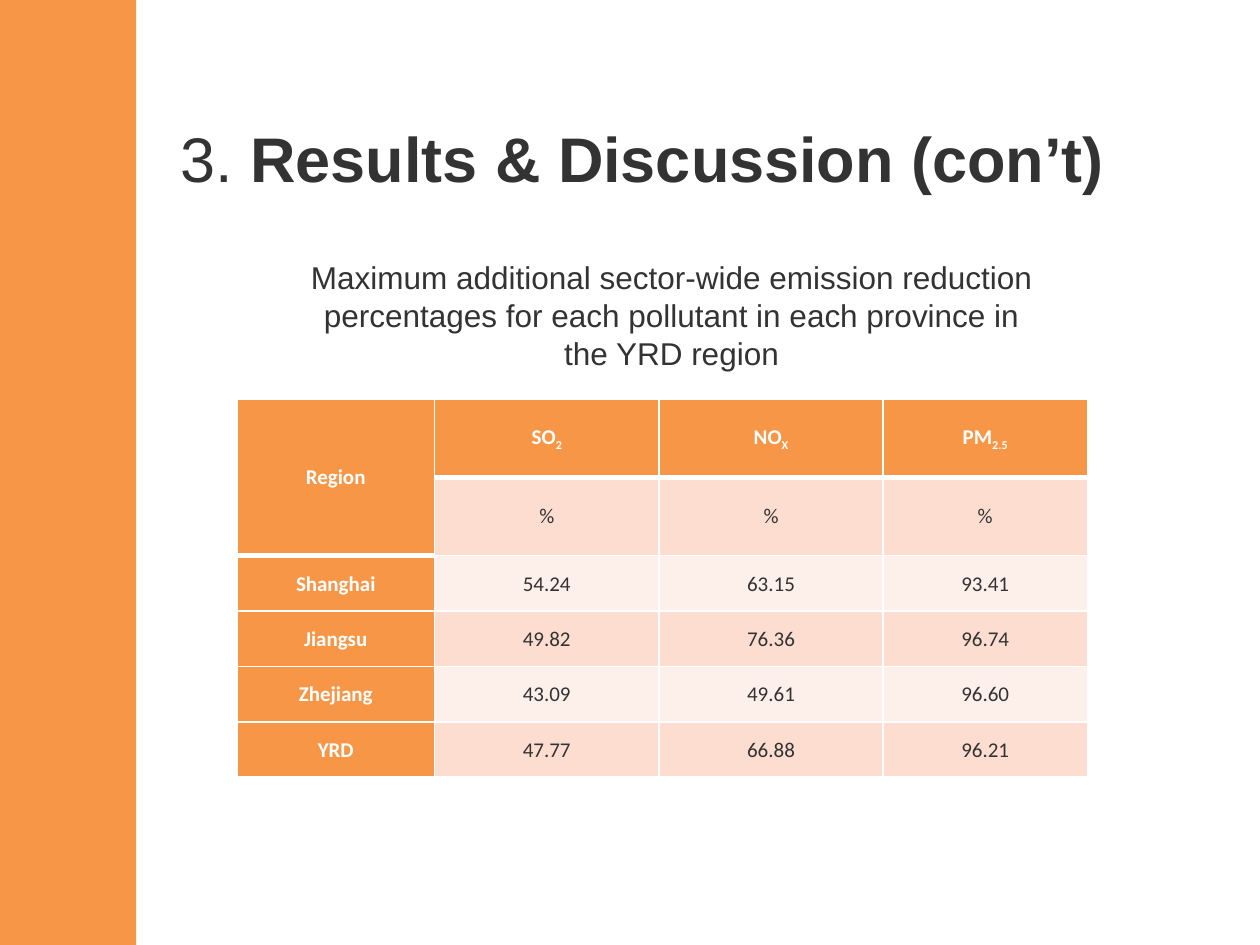
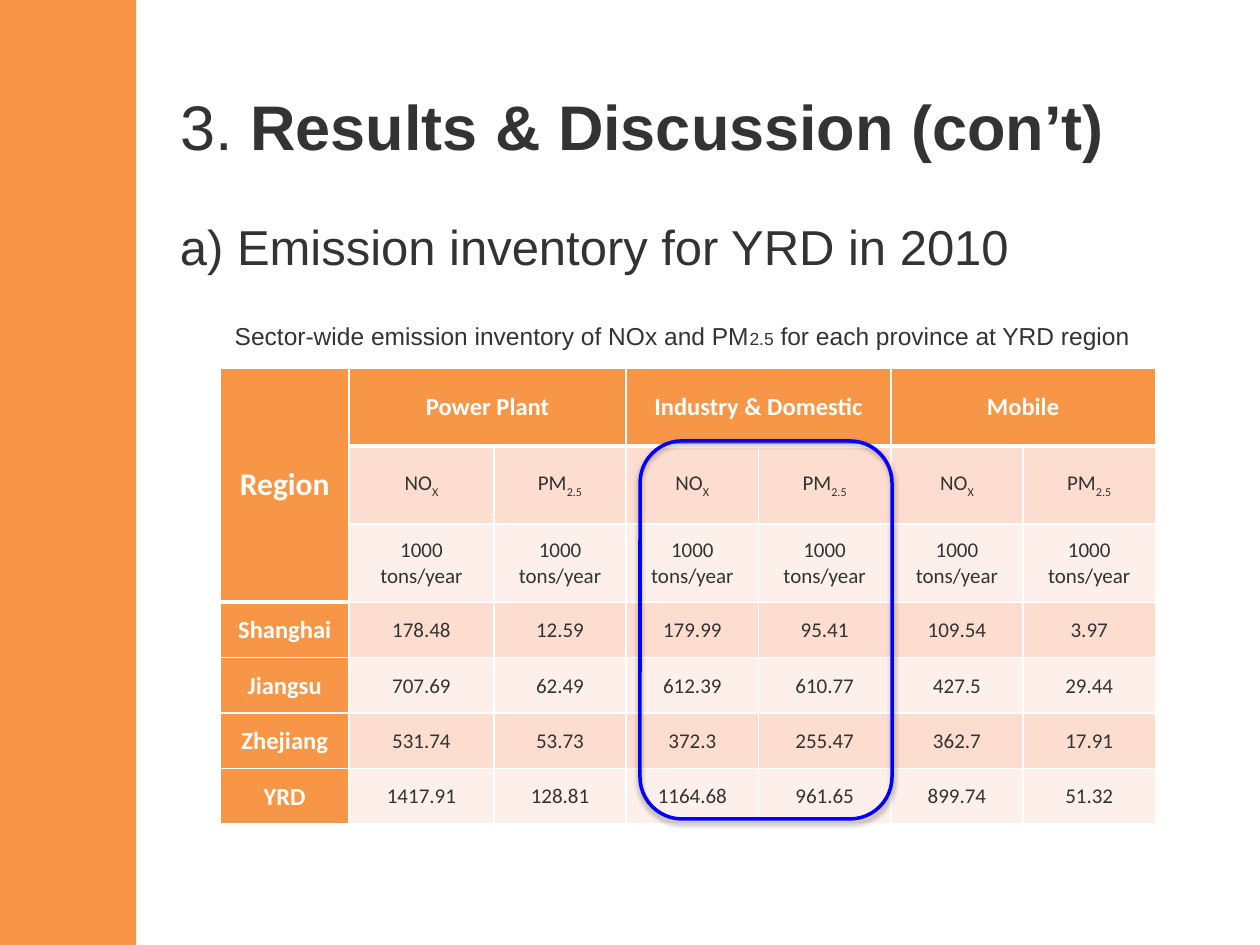
"""Build two results slides on emissions in the YRD region."""
from lxml.etree import SubElement
from pptx import Presentation
from pptx.dml.color import RGBColor
from pptx.enum.shapes import MSO_SHAPE
from pptx.enum.text import MSO_ANCHOR, MSO_AUTO_SIZE, PP_ALIGN
from pptx.oxml.ns import qn
from pptx.util import Inches, Pt

COLORS = {
    "orange": "F79646",
    "text": "333333",
    "white": "FFFFFF",
    "dark_row": "FCDDCF",
    "light_row": "FDEFE9",
    "mark": "0000FF",
    "shadow": "000000",
}
HEAD_HEIGHT, DATA_HEIGHT = 0.62, 0.44
THIN, THICK = 1, 3


def color(name):
    return RGBColor.from_string(COLORS[name])


def box(left, top, width, height):
    return [Inches(v) for v in (left, top, width, height)]


def set_font(font, size, name="Arial", shade="text", bold=None):
    font.name, font.size, font.bold = name, Pt(size), bold
    font.color.rgb = color(shade)


def add_band(slide, layout):
    """Draw the side band and hand it to the layout that the slides share."""
    sp = slide.shapes.add_shape(MSO_SHAPE.RECTANGLE, *box(0, 0, 1.08, 7.5))
    sp.shadow.inherit = False
    sp.fill.solid()
    sp.fill.fore_color.rgb = color("orange")
    sp.line.fill.background()
    layout.shapes._spTree.insert(2, sp._element)


def add_title(slide, top):
    sp = slide.shapes.title
    sp.left, sp.top, sp.width, sp.height = box(1.33, top, 8, 0.83)
    tf = sp.text_frame
    tf.auto_size = MSO_AUTO_SIZE.NONE
    tf.vertical_anchor = MSO_ANCHOR.MIDDLE
    p = tf.paragraphs[0]
    p.alignment = PP_ALIGN.LEFT
    pPr = p._p.get_or_add_pPr()
    pPr.set("marL", str(Inches(0.5)))
    pPr.set("indent", str(-Inches(0.5)))
    set_font(p.font, 36)
    p.add_run().text = "3. "
    r = p.add_run()
    r.text = "Results & Discussion (con’t)"
    r.font.bold = True


def add_text(slide, bounds, runs, align=PP_ALIGN.CENTER):
    """Add a one-paragraph text box from (text, size) runs."""
    tf = slide.shapes.add_textbox(*box(*bounds)).text_frame
    tf.word_wrap = True
    p = tf.paragraphs[0]
    p.alignment = align
    set_font(p.font, runs[0][1])
    for text, size in runs:
        r = p.add_run()
        r.text = text
        r.font.size = Pt(size)


def set_borders(cell, top, bottom):
    tcPr = cell._tc.get_or_add_tcPr()
    for side, weight in (("L", THIN), ("R", THIN), ("T", top), ("B", bottom)):
        ln = SubElement(tcPr, qn(f"a:ln{side}"), w=str(Pt(weight)))
        fill = SubElement(ln, qn("a:solidFill"))
        SubElement(fill, qn("a:srgbClr"), val=COLORS["white"])


def write_cell(cell, text, size, bold):
    """Write centred cell text; what follows an underscore is a subscript."""
    cell.vertical_anchor = MSO_ANCHOR.MIDDLE
    p = cell.text_frame.paragraphs[0]
    p.alignment = PP_ALIGN.CENTER
    set_font(p.font, size, "Calibri", "white" if bold else "text", bold)
    base, _, sub = text.partition("_")
    p.add_run().text = base
    if sub:
        r = p.add_run()
        r.text = sub
        r._r.get_or_add_rPr().set("baseline", "-25000")


def add_data_table(slide, left, top, widths, heads, data, group=1,
                   head_size=12, corner_size=12):
    """Add a region table whose top cells each cover `group` columns."""
    grid = heads + data
    heights = [HEAD_HEIGHT] * len(heads) + [DATA_HEIGHT] * len(data)
    bounds = box(left, top, sum(widths), sum(heights))
    table = slide.shapes.add_table(len(grid), len(widths), *bounds).table
    for column, width in zip(table.columns, widths):
        column.width = Inches(width)
    for row, height in zip(table.rows, heights):
        row.height = Inches(height)
    table.cell(0, 0).merge(table.cell(len(heads) - 1, 0))
    if group > 1:
        for c in range(1, len(widths), group):
            table.cell(0, c).merge(table.cell(0, c + group - 1))
    for r, row in enumerate(grid):
        for c, text in enumerate(row):
            cell = table.cell(r, c)
            label = r == 0 or c == 0
            head_end = len(heads) if c == 0 else 1
            last = r + (cell.span_height if cell.is_merge_origin else 1)
            set_borders(cell, THICK if r == head_end else THIN,
                        THICK if last == head_end else THIN)
            cell.fill.solid()
            stripe = "dark_row" if r % 2 else "light_row"
            cell.fill.fore_color.rgb = color("orange" if label else stripe)
            if r >= len(heads):
                cell.margin_left = cell.margin_right = Inches(0.01)
                cell.margin_top, cell.margin_bottom = Inches(0.01), 0
            if not cell.is_spanned:
                size = corner_size if r == c == 0 else head_size if label else 12
                write_cell(cell, text, size, label)


def add_highlight(slide, bounds):
    """Outline part of a table with a softly shadowed rounded frame."""
    sp = slide.shapes.add_shape(MSO_SHAPE.ROUNDED_RECTANGLE, *box(*bounds))
    sp.fill.background()
    sp.line.color.rgb = color("mark")
    sp.line.width = Pt(2)
    sp.shadow.inherit = False
    effects = sp._element.spPr.find(qn("a:effectLst"))
    shadow = SubElement(effects, qn("a:outerShdw"), blurRad=str(Pt(3.1)),
                        dist=str(Pt(1.8)), dir="5400000", rotWithShape="0")
    clr = SubElement(shadow, qn("a:srgbClr"), val=COLORS["shadow"])
    SubElement(clr, qn("a:alpha"), val="35000")


def build_reduction_slide(slide):
    add_title(slide, 0.83)
    add_data_table(
        slide, 1.88, 3.17, [1.57, 1.78, 1.78, 1.62],
        heads=[["Region", "SO_2", "NO_X", "PM_2.5"], [""] + ["%"] * 3],
        data=[
            ["Shanghai", "54.24", "63.15", "93.41"],
            ["Jiangsu", "49.82", "76.36", "96.74"],
            ["Zhejiang", "43.09", "49.61", "96.60"],
            ["YRD", "47.77", "66.88", "96.21"],
        ])
    add_text(slide, (2.33, 2, 6, 1.25), [
        ("Maximum additional sector-wide emission reduction percentages "
         "for each pollutant in each province in the YRD region", 18)])


def build_inventory_slide(slide):
    add_title(slide, 0.58)
    add_text(slide, (1.33, 1.67, 8.08, 0.57),
             [("a) Emission inventory for YRD in 2010", 28)], PP_ALIGN.LEFT)
    add_data_table(
        slide, 1.75, 2.92, [1.02, 1.15] + [1.05] * 5,
        heads=[
            ["Region", "Power Plant", "", "Industry & Domestic", "", "Mobile", ""],
            [""] + ["NO_X", "PM_2.5"] * 3,
            [""] + ["1000 tons/year"] * 6,
        ],
        data=[
            ["Shanghai", "178.48", "12.59", "179.99", "95.41", "109.54", "3.97"],
            ["Jiangsu", "707.69", "62.49", "612.39", "610.77", "427.5", "29.44"],
            ["Zhejiang", "531.74", "53.73", "372.3", "255.47", "362.7", "17.91"],
            ["YRD", "1417.91", "128.81", "1164.68", "961.65", "899.74", "51.32"],
        ],
        group=2, head_size=14, corner_size=18)
    add_text(slide, (1.75, 2.5, 7.33, 0.34), [
        ("Sector-wide emission inventory of NOx and PM", 14),
        ("2.5", 10),
        (" for each province at YRD region", 14)])
    add_highlight(slide, (5.08, 3.5, 2, 3))


def main():
    prs = Presentation()
    prs.slide_width, prs.slide_height = Inches(10), Inches(7.5)
    layout = prs.slide_layouts.get_by_name("Title Only")
    reduction, inventory = [prs.slides.add_slide(layout) for _ in range(2)]
    add_band(reduction, layout)
    build_reduction_slide(reduction)
    build_inventory_slide(inventory)
    prs.save("out.pptx")


if __name__ == "__main__":
    main()
